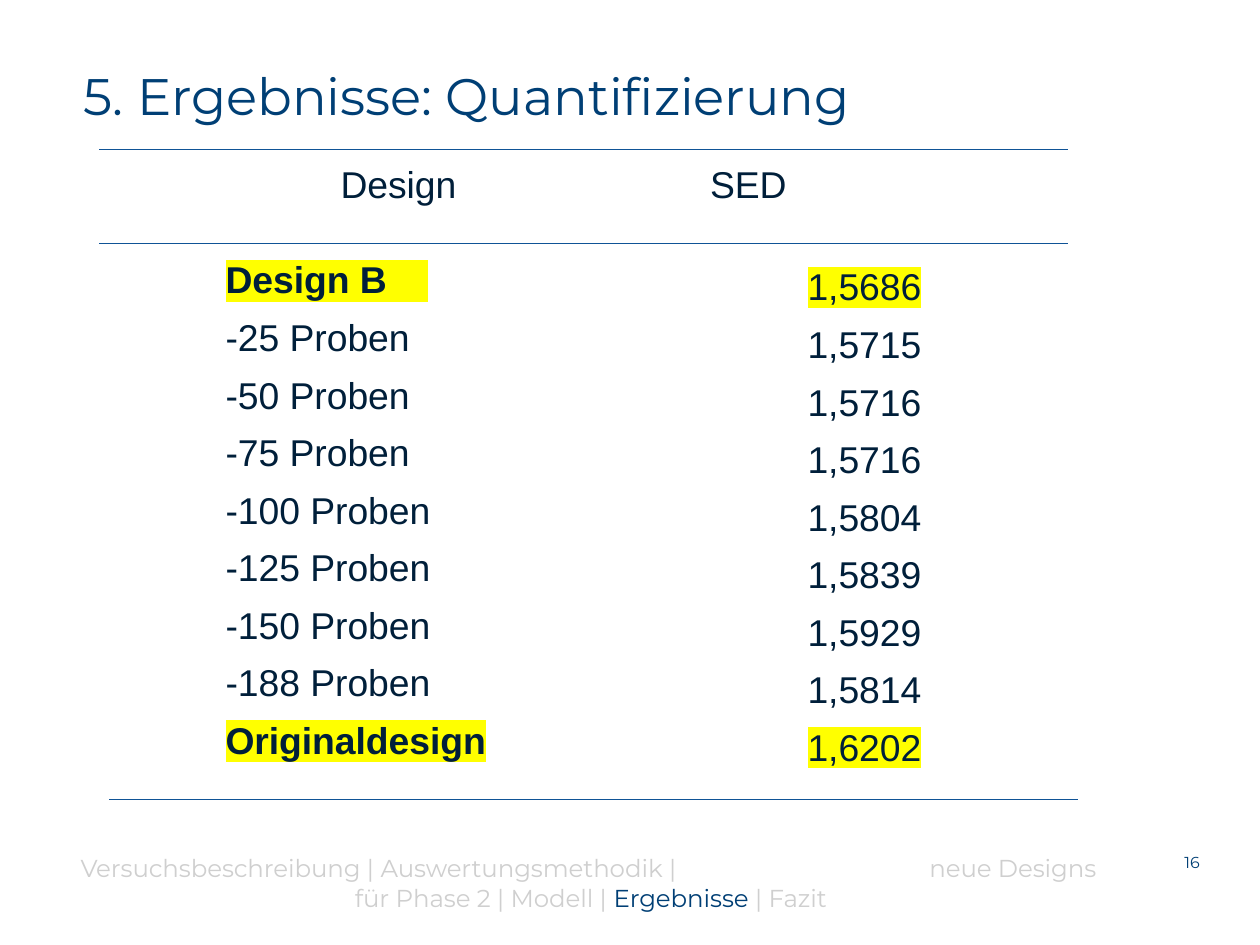
from lxml.etree import SubElement
from pptx import Presentation
from pptx.dml.color import RGBColor
from pptx.enum.shapes import MSO_CONNECTOR
from pptx.enum.text import MSO_ANCHOR, PP_ALIGN
from pptx.oxml.ns import qn
from pptx.util import Cm, Pt

COLORS = {"navy": "003F75", "ink": "001F3A", "grey": "CFCFCF",
          "rule": "0F5396", "mark": "FFFF00"}
FORMATS = {
    "title": {"name": "Montserrat", "size": Pt(22)},
    "foot": {"name": "Montserrat", "size": Pt(10.5)},
    "number": {"name": "Montserrat", "size": Pt(6.8)},
    "cell": {"name": "Arial", "size": Pt(16), "bold": False},
    "strong": {"name": "Arial", "size": Pt(16), "bold": True},
}
ROWS = [
    ("Design B    ", "1,5686"),
    ("-25 Proben", "1,5715"),
    ("-50 Proben", "1,5716"),
    ("-75 Proben", "1,5716"),
    ("-100 Proben", "1,5804"),
    ("-125 Proben", "1,5839"),
    ("-150 Proben", "1,5929"),
    ("-188 Proben", "1,5814"),
    ("Originaldesign", "1,6202"),
]
MARKED = (0, len(ROWS) - 1)
RULES = [(1.5, 2.26), (1.5, 3.68), (1.65, 12.09)]


def color(key):
    return RGBColor.from_string(COLORS[key])


def add_run(para, text, style, tint):
    run = para.add_run()
    run.text = text
    for name, value in FORMATS[style].items():
        setattr(run.font, name, value)
    run.font.color.rgb = color(tint)
    return run


def mark_run(run):
    props = run.font._element
    mark = SubElement(props, qn("a:highlight"))
    SubElement(mark, qn("a:srgbClr"), val=COLORS["mark"])
    props.find(qn("a:latin")).addprevious(mark)


def add_box(slide, left, top, width, height):
    box = slide.shapes.add_textbox(Cm(left), Cm(top), Cm(width), Cm(height))
    box.text_frame.word_wrap = True
    return box.text_frame


def add_title(slide):
    frame = add_box(slide, 1.02, 0.84, 17.15, 1.19)
    add_run(frame.paragraphs[0], "5. Ergebnisse: Quantifizierung", "title", "navy")


def add_number(slide):
    frame = add_box(slide, 17.17, 12.9, 0.97, 0.28)
    for side in ("left", "top", "right", "bottom"):
        setattr(frame, "margin_" + side, 0)
    para = frame.paragraphs[0]
    para.alignment = PP_ALIGN.RIGHT
    add_run(para, "16", "number", "navy")


def add_foot(slide):
    frame = add_box(slide, 0.97, 12.78, 15.93, 0.51)
    first = frame.paragraphs[0]
    add_run(first, "Versuchsbeschreibung | Auswertungsmethodik |\tneue Designs",
            "foot", "grey")
    tabs = SubElement(first._p.get_or_add_pPr(), qn("a:tabLst"))
    SubElement(tabs, qn("a:tab"), pos=str(Cm(15.36)), algn="r")
    second = frame.add_paragraph()
    second.alignment = PP_ALIGN.CENTER
    for text, tint in (("für Phase 2 | Modell | ", "grey"),
                       ("Ergebnisse", "navy"), (" | Fazit", "grey")):
        add_run(second, text, "foot", tint)


def fill_cell(cell, text, align, anchor, style="cell", marked=False):
    cell.fill.background()
    values = {"margin_left": Cm(0.03), "margin_top": Cm(0.03),
              "margin_right": Cm(0.03), "margin_bottom": 0,
              "vertical_anchor": anchor}
    for name, value in values.items():
        setattr(cell, name, value)
    para = cell.text_frame.paragraphs[0]
    para.alignment = align
    run = add_run(para, text, style, "ink")
    if marked:
        mark_run(run)


def add_grid(slide):
    height = 1.34 + 0.87 * len(ROWS)
    grid = slide.shapes.add_table(len(ROWS) + 1, 2, Cm(3.38), Cm(2.46),
                                  Cm(10.58), Cm(height)).table
    grid.first_row = grid.horz_banding = False
    for index, row in enumerate(grid.rows):
        row.height = Cm(0.87 if index else 1.34)
    for col, text in enumerate(("Design", "SED")):
        fill_cell(grid.cell(0, col), text, PP_ALIGN.CENTER, MSO_ANCHOR.TOP)
    for index, (design, value) in enumerate(ROWS):
        marked = index in MARKED
        fill_cell(grid.cell(index + 1, 0), design, PP_ALIGN.LEFT,
                  MSO_ANCHOR.MIDDLE, "strong" if marked else "cell", marked)
        fill_cell(grid.cell(index + 1, 1), value, PP_ALIGN.RIGHT,
                  MSO_ANCHOR.BOTTOM, marked=marked)


def add_rule(slide, left, top):
    rule = slide.shapes.add_connector(MSO_CONNECTOR.STRAIGHT, Cm(left), Cm(top),
                                      Cm(left + 14.65), Cm(top))
    rule.line.color.rgb = color("rule")
    rule.line.width = Pt(0.5)
    SubElement(rule._element.spPr, qn("a:effectLst"))


def main():
    deck = Presentation()
    deck.slide_width, deck.slide_height = Cm(19.05), Cm(14.29)
    slide = deck.slides.add_slide(deck.slide_layouts[6])
    add_number(slide)
    add_title(slide)
    add_foot(slide)
    add_grid(slide)
    for left, top in RULES:
        add_rule(slide, left, top)
    deck.save("out.pptx")


if __name__ == "__main__":
    main()
